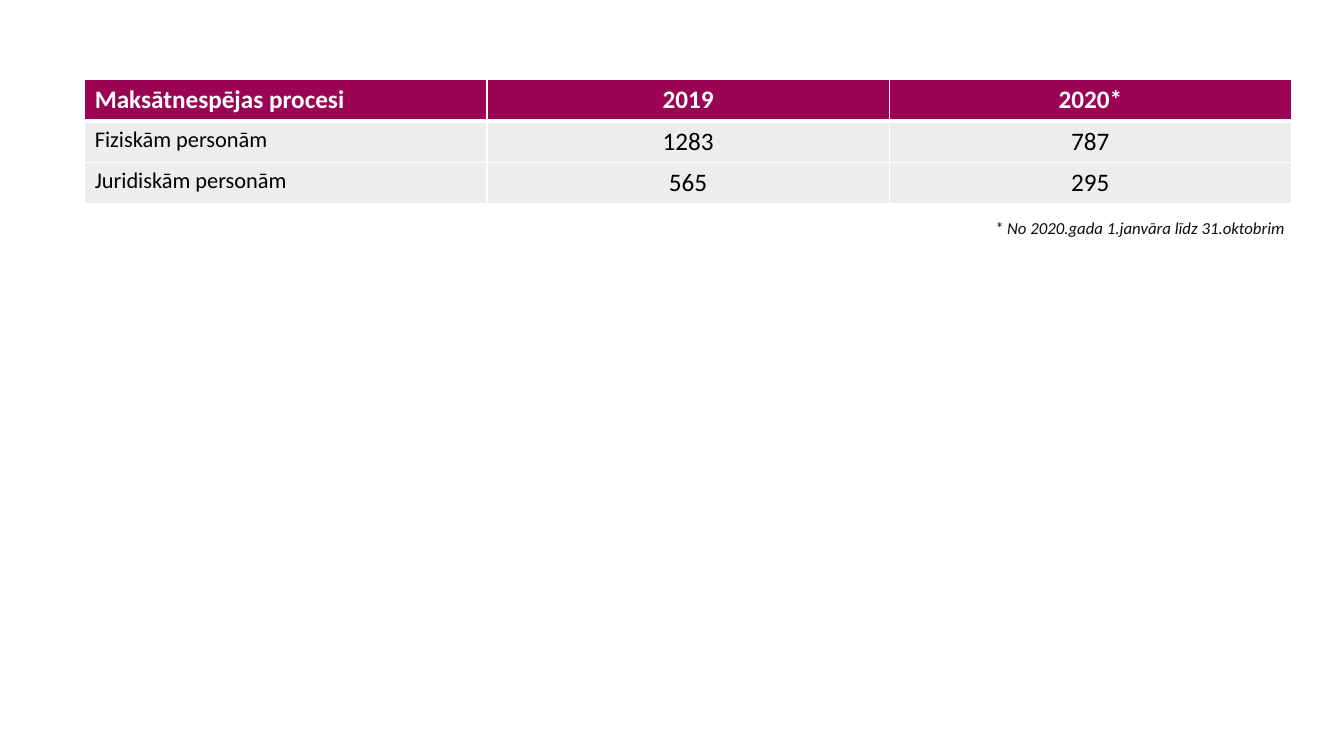
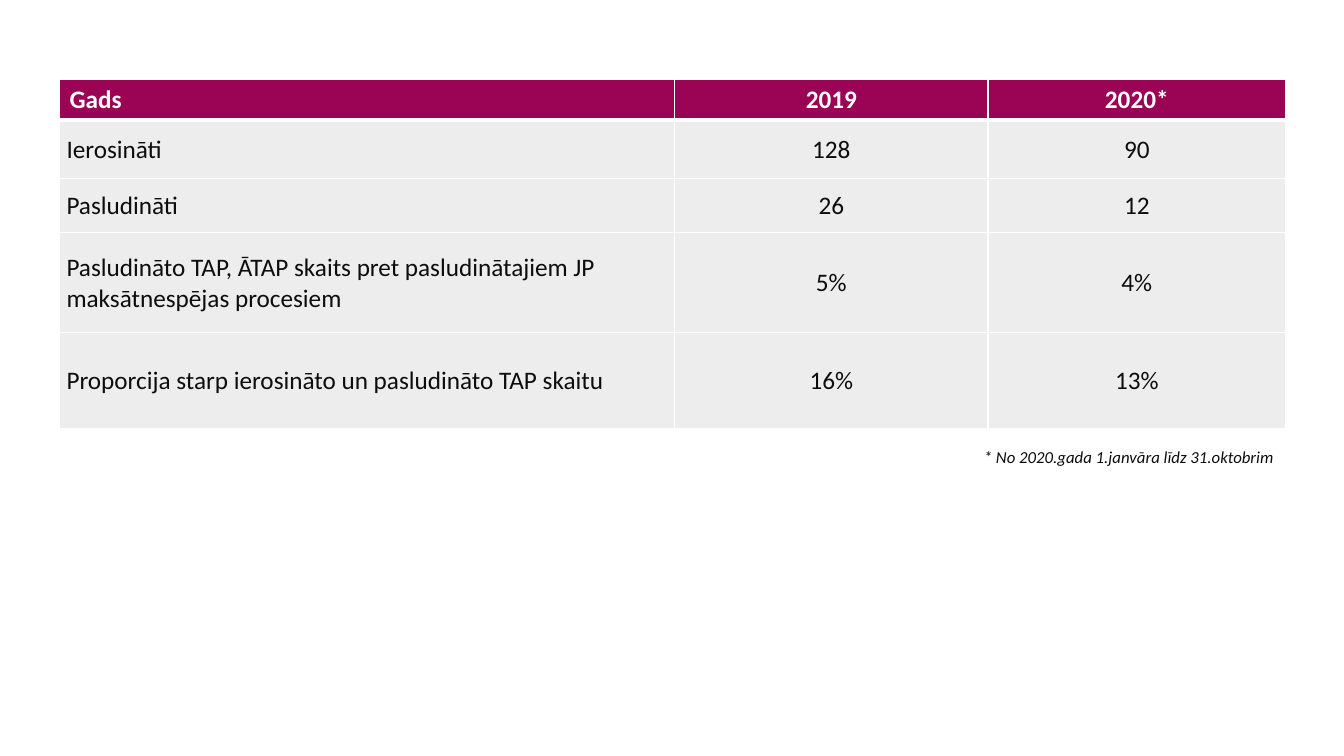
from lxml.etree import SubElement
from pptx import Presentation
from pptx.dml.color import RGBColor
from pptx.enum.text import MSO_ANCHOR, PP_ALIGN
from pptx.oxml.ns import qn
from pptx.util import Pt

PX = 9144
FONT = "Calibri"
WHITE = RGBColor(0xFF, 0xFF, 0xFF)
BLACK = RGBColor(0x00, 0x00, 0x00)
INK = RGBColor(0x0D, 0x0D, 0x0D)
PLUM = RGBColor(0x9B, 0x04, 0x55)
GREY = RGBColor(0xED, 0xED, 0xED)
NOTE = "* No 2020.gada 1.janvāra līdz 31.oktobrim"
YEARS = ["2019", "2020*"]


def px(value):
    return value * PX


def format_text(tf, size, color, align=PP_ALIGN.LEFT, bold=False, italic=False):
    for p in tf.paragraphs:
        p.alignment = align
        for r in p.runs:
            r.font.name = FONT
            r.font.size = Pt(size)
            r.font.color.rgb = color
            r.font.bold = bold
            r.font.italic = italic


def set_borders(cell, top, bottom):
    tc_pr = cell._tc.get_or_add_tcPr()
    for side, width in (("L", 1), ("R", 1), ("T", top), ("B", bottom)):
        ln = SubElement(tc_pr, qn(f"a:ln{side}"), w=str(Pt(width)))
        fill = SubElement(ln, qn("a:solidFill"))
        SubElement(fill, qn("a:srgbClr"), val=str(WHITE))


def fill_cell(cell, fill):
    cell.fill.solid()
    cell.fill.fore_color.rgb = fill


def set_tight(cell, left):
    cell.vertical_anchor = MSO_ANCHOR.MIDDLE
    cell.margin_left = px(left)
    cell.margin_top = cell.margin_right = px(1)
    cell.margin_bottom = 0


def add_table(slide, left, top, widths, heights, rows, label_size, color, tight=False):
    table = slide.shapes.add_table(
        len(rows), len(widths), px(left), px(top), px(sum(widths)), px(sum(heights))
    ).table
    for column, width in zip(table.columns, widths):
        column.width = px(width)
    for row, height in zip(table.rows, heights):
        row.height = px(height)
    for i, values in enumerate(rows):
        header = i == 0
        for j, value in enumerate(values):
            cell = table.cell(i, j)
            cell.text_frame.text = value
            size = 18 if header or j else label_size
            align = PP_ALIGN.CENTER if j else PP_ALIGN.LEFT
            format_text(cell.text_frame, size, WHITE if header else color, align, bold=header)
            set_borders(cell, top=3 if i == 1 else 1, bottom=3 if header else 1)
            fill_cell(cell, PLUM if header else GREY)
            if tight and not header:
                set_tight(cell, 1 if j else 7)


def add_note(slide, left, top):
    tf = slide.shapes.add_textbox(px(left), px(top), px(336), px(30)).text_frame
    tf.word_wrap = True
    tf.text = NOTE
    format_text(tf, 12, INK, italic=True)


def add_process_slide(prs, layout):
    slide = prs.slides.add_slide(layout)
    rows = [
        ["Maksātnespējas procesi", *YEARS],
        ["Fiziskām personām", "1283", "787"],
        ["Juridiskām personām", "565", "295"],
    ]
    add_table(slide, 84, 79, [399] * 3, [41] * 3, rows, 16, BLACK)
    add_note(slide, 977, 211)


def add_proportion_slide(prs, layout):
    slide = prs.slides.add_slide(layout)
    rows = [
        ["Gads", *YEARS],
        ["Ierosināti", "128", "90"],
        ["Pasludināti", "26", "12"],
        [
            "Pasludināto TAP, ĀTAP skaits pret pasludinātajiem JP\nmaksātnespējas procesiem",
            "5%",
            "4%",
        ],
        ["Proporcija starp ierosināto un pasludināto TAP skaitu", "16%", "13%"],
    ]
    add_table(slide, 59, 79, [610, 311, 295], [40, 58, 54, 99, 95], rows, 18, INK, tight=True)
    add_note(slide, 966, 438)


def main():
    prs = Presentation()
    prs.slide_width, prs.slide_height = px(1333), px(750)
    blank = prs.slide_layouts[6]
    add_process_slide(prs, blank)
    add_proportion_slide(prs, blank)
    prs.save("out.pptx")


if __name__ == "__main__":
    main()
